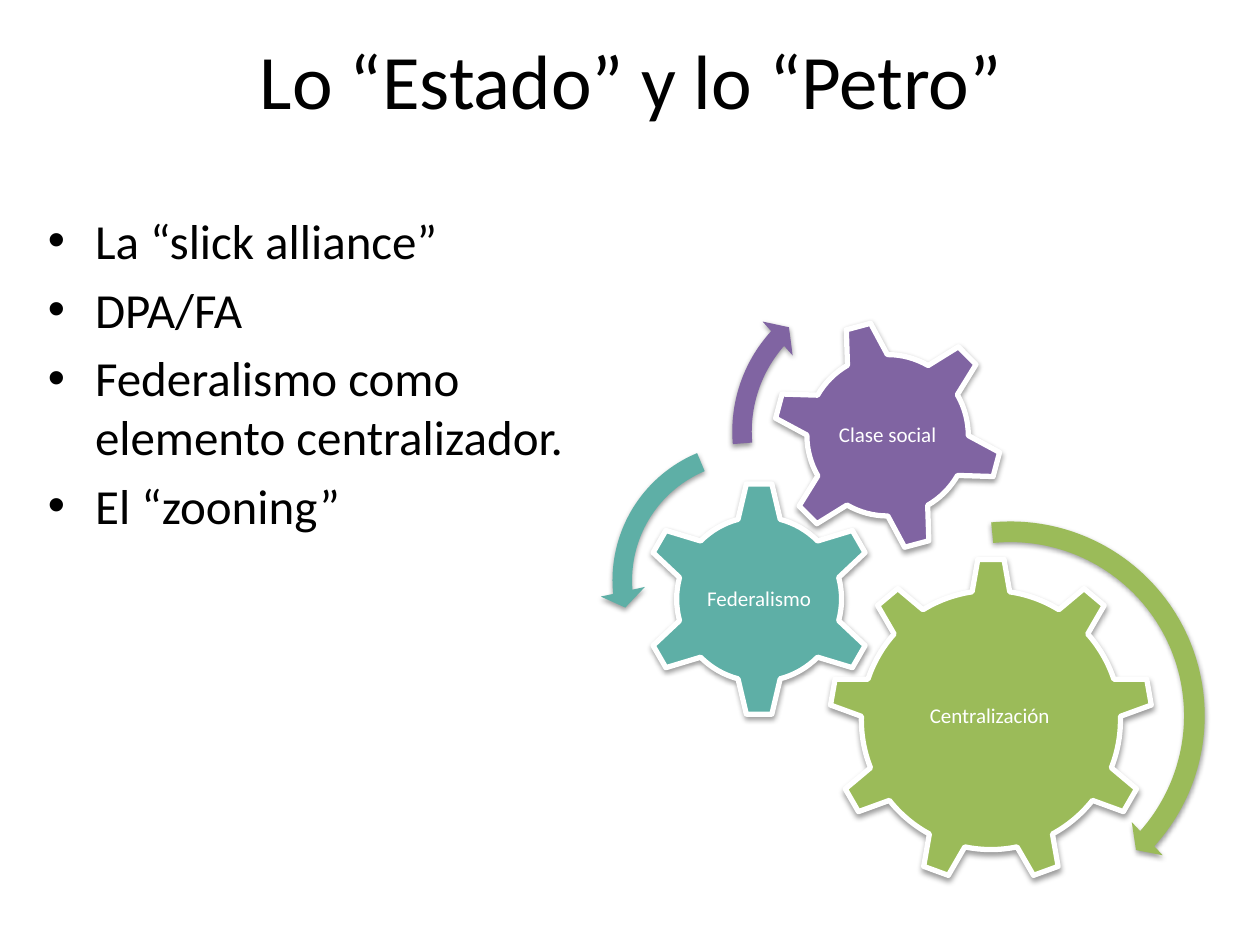
from dataclasses import dataclass

from lxml.etree import SubElement
from pptx import Presentation
from pptx.dml.color import RGBColor as RGB
from pptx.enum.shapes import MSO_SHAPE as Shape
from pptx.enum.text import MSO_ANCHOR as Anchor, PP_ALIGN as Align
from pptx.oxml.ns import qn
from pptx.util import Inches, Pt


@dataclass(frozen=True)
class Theme:
    font: str = "Calibri"
    ink: RGB = RGB(0, 0, 0)
    white: RGB = RGB(255, 255, 255)
    green: RGB = RGB(0x9B, 0xBB, 0x59)
    teal: RGB = RGB(0x5E, 0xAF, 0xA6)
    purple: RGB = RGB(0x80, 0x64, 0xA2)
    title_size: Pt = Pt(44)
    list_size: Pt = Pt(28)
    gear_size: Pt = Pt(12)


theme = Theme()


def add_run(paragraph, text, size, color):
    run = paragraph.add_run()
    run.text = text
    run.font.name = theme.font
    run.font.size = size
    run.font.color.rgb = color


def add_shadowed(parent, preset, left, top, size, color):
    """Add a square-framed shape with a solid fill and a soft shadow below it."""
    shape = parent.shapes.add_shape(
        preset, Inches(left), Inches(top), Inches(size), Inches(size))
    shape.fill.solid()
    shape.fill.fore_color.rgb = color
    shape.shadow.inherit = False
    effects = shape._element.spPr.find(qn("a:effectLst"))
    shadow = SubElement(effects, qn("a:outerShdw"), blurRad=str(Pt(3.1)),
                        dist=str(Pt(1.6)), dir="5400000", rotWithShape="0")
    black = SubElement(shadow, qn("a:srgbClr"), val="000000")
    SubElement(black, qn("a:alpha"), val="38000")
    return shape


prs = Presentation()
prs.slide_width, prs.slide_height = Inches(10), Inches(7.5)
slide = prs.slides.add_slide(prs.slide_layouts[1])

title = slide.shapes.title
title.left, title.top = Inches(0.51), Inches(0)
title.width, title.height = Inches(9), Inches(1.25)
add_run(title.text_frame.paragraphs[0], "Lo “Estado” y lo “Petro”",
        theme.title_size, theme.ink)

topics = slide.placeholders[1]
topics.left, topics.top = Inches(0.28), Inches(1.62)
topics.width, topics.height = Inches(4.96), Inches(4.95)
topic_texts = ["La “slick alliance”", "DPA/FA",
               "Federalismo como elemento centralizador.", "El “zooning”"]
for i, text in enumerate(topic_texts):
    frame = topics.text_frame
    paragraph = frame.add_paragraph() if i else frame.paragraphs[0]
    add_run(paragraph, text, theme.list_size, theme.ink)

mechanism = slide.shapes.add_group_shape()

# label, preset, gear (left, top, size), rotation, colour, label box
gears = [
    ("Centralización", Shape.GEAR_9, (6.58, 4.43, 2.57), 0, theme.green,
     (7.09, 5.03, 1.53, 1.32)),
    ("Federalismo", Shape.GEAR_6, (5.09, 3.82, 1.87), 0, theme.teal,
     (5.56, 4.3, 0.93, 0.92)),
    ("Clase social", Shape.GEAR_6, (6.13, 2.54, 1.83), 345, theme.purple,
     (6.53, 2.94, 1.03, 1.03)),
]
for text, preset, place, rotation, color, label_box in gears:
    gear = add_shadowed(mechanism, preset, *place, color)
    gear.rotation = rotation
    gear.line.color.rgb = theme.white
    gear.line.width = Pt(3)

    label = mechanism.shapes.add_textbox(*map(Inches, label_box)).text_frame
    label.word_wrap = True
    label.vertical_anchor = Anchor.MIDDLE
    label.margin_left = label.margin_right = Inches(0.02)
    label.margin_top = label.margin_bottom = Inches(0.02)
    paragraph = label.paragraphs[0]
    paragraph.alignment = Align.CENTER
    paragraph.line_spacing = 0.9
    add_run(paragraph, text, theme.gear_size, theme.white)

# preset, (left, top, size), colour, adjustments:
# thickness, head angle, end angle, start angle, head width
turns = [
    (Shape.CIRCULAR_ARROW, (6.38, 4.04, 3.28), theme.green,
     (0.05, 2.99, 25.18, 158.58, 0.055)),
    (Shape.LEFT_CIRCULAR_ARROW, (4.76, 3.41, 2.39), theme.teal,
     (0.065, 4.3, 104.89, 148.38, 0.075)),
    (Shape.CIRCULAR_ARROW, (5.71, 2.14, 2.57), theme.purple,
     (0.06, 3.94, 133.14, 105.08, 0.07)),
]
for preset, place, color, adjustments in turns:
    turn = add_shadowed(mechanism, preset, *place, color)
    turn.line.fill.background()
    for i, value in enumerate(adjustments):
        turn.adjustments[i] = value

prs.save("out.pptx")
